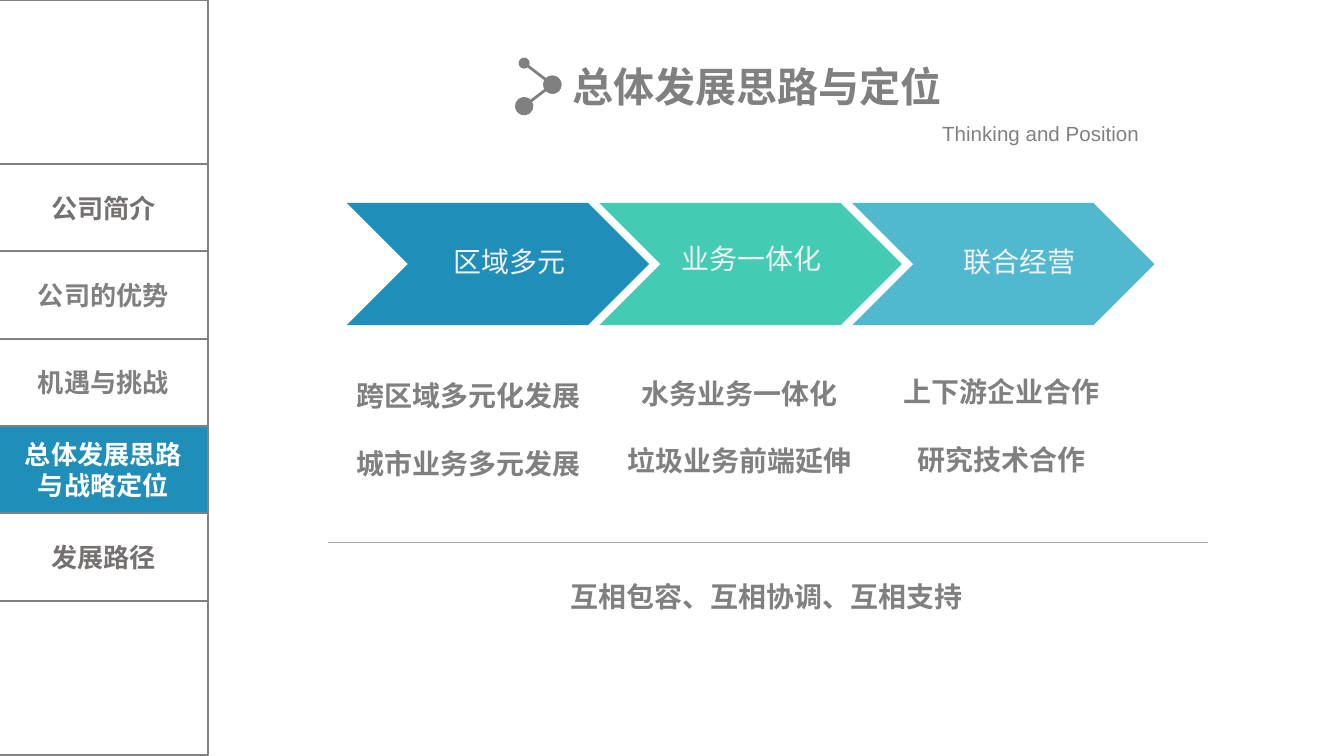
from lxml import etree
from pptx import Presentation
from pptx.dml.color import RGBColor
from pptx.enum.shapes import MSO_CONNECTOR, MSO_SHAPE
from pptx.enum.text import MSO_ANCHOR, MSO_AUTO_SIZE, PP_ALIGN
from pptx.oxml.ns import qn
from pptx.util import Inches, Pt

LEFT, CENTER = PP_ALIGN.LEFT, PP_ALIGN.CENTER
TOP, MIDDLE = MSO_ANCHOR.TOP, MSO_ANCHOR.MIDDLE
NO_FIT = MSO_AUTO_SIZE.NONE
CHEVRON, RECTANGLE = MSO_SHAPE.CHEVRON, MSO_SHAPE.RECTANGLE
STRAIGHT = MSO_CONNECTOR.STRAIGHT


class Theme:
    latin, chinese = "Arial", "Noto Sans CJK SC"
    blue = RGBColor.from_string("1F8EB9")
    green = RGBColor.from_string("43CBB3")
    sky = RGBColor.from_string("50B9CF")
    gray = RGBColor.from_string("808080")
    warm_gray = RGBColor.from_string("767171")
    rule = RGBColor.from_string("A6A6A6")
    pale = RGBColor.from_string("F2F2F2")
    white = RGBColor.from_string("FFFFFF")
    title, body, nav, subtitle = Pt(22), Pt(15), Pt(14), Pt(11)


def write(shape, lines, size, color, font=Theme.chinese, bold=True, align=CENTER,
          anchor=TOP, margins=(0.07, 0.04), spacing=None, gap=Pt(18), wrap=True):
    frame = shape.text_frame
    frame.word_wrap = wrap
    frame.auto_size = NO_FIT
    frame.vertical_anchor = anchor
    frame.margin_left = frame.margin_right = Inches(margins[0])
    frame.margin_top = frame.margin_bottom = Inches(margins[1])
    frame.text = "\n".join(lines)
    for index, paragraph in enumerate(frame.paragraphs):
        paragraph.alignment = align
        if spacing:
            paragraph.line_spacing = spacing
        if index:
            paragraph.space_before = gap
        paragraph.font.size = size
        paragraph.font.bold = bold
        paragraph.font.color.rgb = color
        paragraph.font.name = font
        latin = paragraph._p.pPr.find(qn("a:defRPr")).find(qn("a:latin"))
        east_asian = etree.Element(qn("a:ea"), typeface=Theme.chinese)
        latin.addnext(east_asian)


def connect(start, end, color, width, dots=()):
    connector = slide.shapes.add_connector(STRAIGHT, *map(Inches, start + end))
    connector.line.color.rgb = color
    connector.line.width = width
    line = connector.line._ln
    for tag, dot_size in zip(("a:headEnd", "a:tailEnd"), dots):
        etree.SubElement(line, qn(tag), type="oval", w=dot_size, len=dot_size)
    etree.SubElement(connector._element.spPr, qn("a:effectLst"))


prs = Presentation()
prs.slide_width = Inches(10)
prs.slide_height = Inches(10) * 9 // 16
slide = prs.slides.add_slide(prs.slide_layouts[5])

title = slide.shapes.title
title.left, title.top, title.width, title.height = map(Inches, (4.19, 0.42, 2.9, 0.44))
write(title, ["总体发展思路与定位"], Theme.title, Theme.gray, Theme.latin,
      align=LEFT, wrap=False)

stages = [
    ("区域多元", Theme.blue, (2.81, 1.72, 1.96, 0.4), 1.2),
    ("业务一体化", Theme.green, (4.64, 1.75, 1.91, 0.35), None),
    ("联合经营", Theme.sky, (6.64, 1.72, 1.89, 0.4), 1.2),
]
for index, (stage, color, label_area, spacing) in enumerate(stages):
    arrow = slide.shapes.add_shape(
        CHEVRON, *map(Inches, (2.58 + 1.88 * index, 1.51, 2.25, 0.91)))
    arrow.shadow.inherit = False
    arrow.fill.solid()
    arrow.fill.fore_color.rgb = color
    arrow.line.fill.background()
    label = slide.shapes.add_textbox(*map(Inches, label_area))
    write(label, [stage], Theme.body, Theme.pale, Theme.latin, bold=False,
          anchor=MIDDLE, margins=(0.1, 0.05), spacing=spacing)

details = [
    (["跨区域多元化发展", "城市业务多元发展"], (2.58, 2.78, 2.11, 0.83), LEFT),
    (["水务业务一体化", "垃圾业务前端延伸"], (4.52, 2.76, 1.96, 0.83), CENTER),
    (["上下游企业合作", "研究技术合作"], (6.48, 2.75, 1.95, 0.83), CENTER),
]
for lines, area, align in details:
    detail = slide.shapes.add_textbox(*map(Inches, area))
    write(detail, lines, Theme.body, Theme.gray, align=align)

connect((2.44, 4.04), (8.99, 4.04), Theme.rule, Pt(0.5))
principle = slide.shapes.add_textbox(*map(Inches, (2.14, 4.2, 7.13, 0.4)))
write(principle, ["互相包容、互相协调、互相支持"], Theme.body, Theme.gray, spacing=1.3)

connect((3.9, 0.47), (4.11, 0.63), Theme.gray, Pt(1.5), ("med", "lg"))
connect((4.11, 0.63), (3.9, 0.79), Theme.gray, Pt(1.5), ("lg", "lg"))
subtitle = slide.shapes.add_textbox(*map(Inches, (6.94, 0.86, 2.72, 0.26)))
write(subtitle, ["Thinking and Position"], Theme.subtitle, Theme.gray, Theme.latin,
      bold=False, align=LEFT)

sections = [
    ("公司简介", Theme.warm_gray),
    ("公司的优势", Theme.gray),
    ("机遇与挑战", Theme.gray),
    ("总体发展思路与战略定位", Theme.white),
    ("发展路径", Theme.warm_gray),
]
cells = [("", Theme.gray, 0, 5.62)]
cells += [(section, color, 1.22 + 0.65 * index, 0.65)
          for index, (section, color) in enumerate(sections)]
for section, color, top, height in cells:
    cell = slide.shapes.add_shape(RECTANGLE, *map(Inches, (-0.01, top, 1.56, height)))
    cell.shadow.inherit = False
    cell.line.color.rgb = Theme.gray
    cell.line.width = Pt(1)
    if color == Theme.white:
        cell.fill.solid()
        cell.fill.fore_color.rgb = Theme.blue
    else:
        cell.fill.background()
    if section:
        write(cell, [section], Theme.nav, color, anchor=MIDDLE, margins=(0.1, 0.05))

prs.save("out.pptx")
